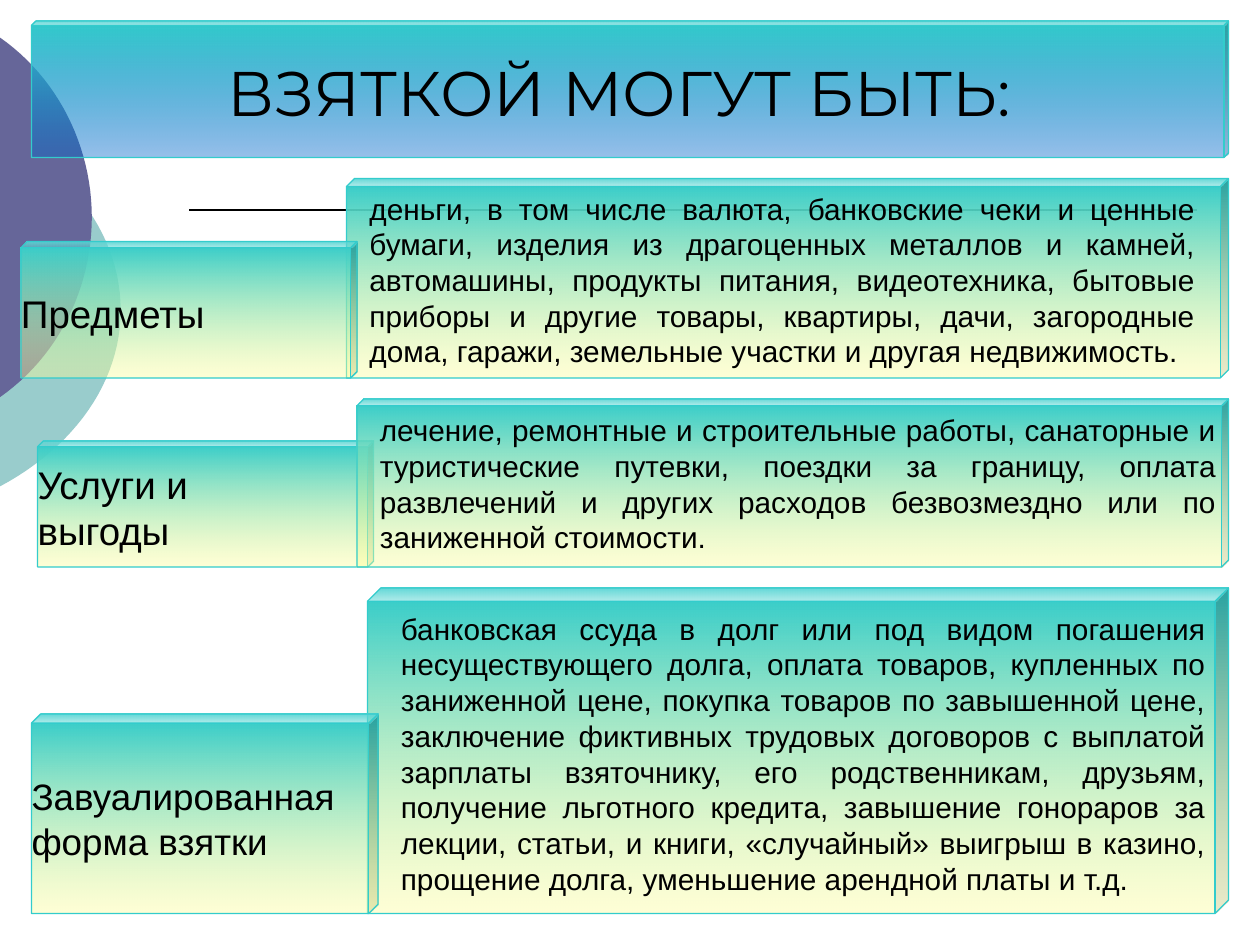
from lxml.etree import SubElement
from pptx import Presentation
from pptx.dml.color import RGBColor
from pptx.enum.shapes import MSO_CONNECTOR, MSO_SHAPE
from pptx.enum.text import MSO_ANCHOR, MSO_AUTO_SIZE, PP_ALIGN
from pptx.oxml.ns import qn
from pptx.util import Pt

BLACK = RGBColor(0x00, 0x00, 0x00)
TEAL = RGBColor(0x33, 0xCC, 0xCC)
BLUE = RGBColor(0x00, 0x66, 0xCC)
YELLOW = RGBColor(0xFF, 0xFF, 0x99)
PALE_TEAL = RGBColor(0x99, 0xCC, 0xCC)
PURPLE = RGBColor(0x66, 0x66, 0x99)

LABEL_DEPTH = 0.046
BODY_DEPTH = 0.041

# label, label size, label box, body box, text box, label in front
ROWS = [
    (["Предметы"], 22, (12, 138, 192, 78), (198, 102, 504, 114), (204, 105, 486, 109.5), True,
     "деньги, в том числе валюта, банковские чеки и ценные бумаги, изделия из драгоценных "
     "металлов и камней, автомашины, продукты питания, видеотехника, бытовые приборы и другие "
     "товары, квартиры, дачи, загородные дома, гаражи, земельные участки и другая недвижимость."),
    (["Услуги и", "выгоды"], 22, (21.5, 252, 192, 72), (204, 228, 498, 96),
     (210, 232, 492, 88.5), False,
     "лечение, ремонтные и строительные работы, санаторные и туристические путевки, поездки за "
     "границу, оплата развлечений и других расходов безвозмездно или по заниженной стоимости."),
    (["Завуалированная", "форма взятки"], 21, (18, 408, 198, 114), (210, 336, 492, 186),
     (222, 345.5, 474, 170), True,
     "банковская ссуда в долг или под видом погашения несуществующего долга, оплата товаров, "
     "купленных по заниженной цене, покупка товаров по завышенной цене, заключение фиктивных "
     "трудовых договоров с выплатой зарплаты взяточнику, его родственникам, друзьям, получение "
     "льготного кредита, завышение гонораров за лекции, статьи, и книги, «случайный» выигрыш в "
     "казино, прощение долга, уменьшение арендной платы и т.д."),
]


def write_text(shape, lines, *, size, font="Arial", align=PP_ALIGN.LEFT, wrap=False,
               margins=(0, 0)):
    frame = shape.text_frame
    frame.word_wrap = wrap
    frame.vertical_anchor = MSO_ANCHOR.MIDDLE
    frame.margin_left = frame.margin_right = Pt(margins[0])
    frame.margin_top = frame.margin_bottom = Pt(margins[1])
    for index, line in enumerate(lines):
        para = frame.paragraphs[0] if index == 0 else frame.add_paragraph()
        para.alignment = align
        span = para.add_run()
        span.text = line
        span.font.size = Pt(size)
        span.font.name = font
        span.font.color.rgb = BLACK


def add_block(page, box, depth, end_color):
    """Cube fading downwards from teal to a 40 % opaque end colour."""
    block = page.shapes.add_shape(MSO_SHAPE.CUBE, *map(Pt, box))
    block.shadow.inherit = False
    block.adjustments[0] = depth
    block.fill.gradient()
    block.fill.gradient_angle = 270
    first, last = block.fill.gradient_stops
    first.position, last.position = 0, 1
    first.color.rgb, last.color.rgb = TEAL, end_color
    color = block._element.spPr.findall(".//" + qn("a:srgbClr"))[1]
    SubElement(color, qn("a:alpha"), val="40000")
    block.line.color.rgb = TEAL
    block.line.width = Pt(0.75)
    return block


def add_disc_edge(page, top, height, bulge, first_control, second_control, color):
    """Part of a disc cut by the left page edge; its upper Bezier half is mirrored below."""
    steps = 24
    upper = []
    for step in range(steps + 1):
        t = step / steps
        weights = (3 * t * (1 - t) ** 2, 3 * t ** 2 * (1 - t), t ** 3)
        controls = (first_control, (bulge, second_control), (bulge, height / 2))
        upper.append(tuple(sum(w * c[axis] for w, c in zip(weights, controls))
                           for axis in (0, 1)))
    lower = [(x, height - y) for x, y in reversed(upper[:-1])]
    points = [(Pt(x), Pt(top + y)) for x, y in upper + lower]
    builder = page.shapes.build_freeform(*points[0])
    builder.add_line_segments(points[1:], close=True)
    disc = builder.convert_to_shape()
    disc.shadow.inherit = False
    disc.fill.solid()
    disc.fill.fore_color.rgb = color
    disc.line.fill.background()


def add_backdrop(page):
    add_disc_edge(page, 76.5, 201.5, 69, (43, 23), 60, PALE_TEAL)
    add_disc_edge(page, 21.5, 205.5, 52.5, (33, 23), 62, PURPLE)
    rule = page.shapes.add_connector(MSO_CONNECTOR.STRAIGHT, Pt(108), Pt(120), Pt(684), Pt(120))
    rule.line.color.rgb = BLACK
    rule.line.width = Pt(1)
    SubElement(rule._element.spPr, qn("a:effectLst"))


def add_title(page, box):
    title = add_block(page, box, 0.033, BLUE)
    write_text(title, ["ВЗЯТКОЙ МОГУТ БЫТЬ: "], size=36, font="Montserrat", align=PP_ALIGN.CENTER)


def add_label(page, box, lines, size):
    write_text(add_block(page, box, LABEL_DEPTH, YELLOW), lines, size=size)


def add_row(page, label, label_size, label_box, body_box, text_box, label_in_front, text):
    if not label_in_front:
        add_label(page, label_box, label, label_size)
    add_block(page, body_box, BODY_DEPTH, YELLOW)
    body = page.shapes.add_textbox(*map(Pt, text_box))
    write_text(body, [text], size=17, align=PP_ALIGN.JUSTIFY, wrap=True, margins=(7.2, 3.6))
    body.text_frame.auto_size = MSO_AUTO_SIZE.SHAPE_TO_FIT_TEXT
    if label_in_front:
        add_label(page, label_box, label, label_size)


def main():
    deck = Presentation()
    deck.slide_width, deck.slide_height = Pt(720), Pt(540)
    page = deck.slides.add_slide(deck.slide_layouts[6])
    add_backdrop(page)
    add_title(page, (18, 12, 684, 78))
    for row in ROWS:
        add_row(page, *row)
    deck.save("out.pptx")


if __name__ == "__main__":
    main()
